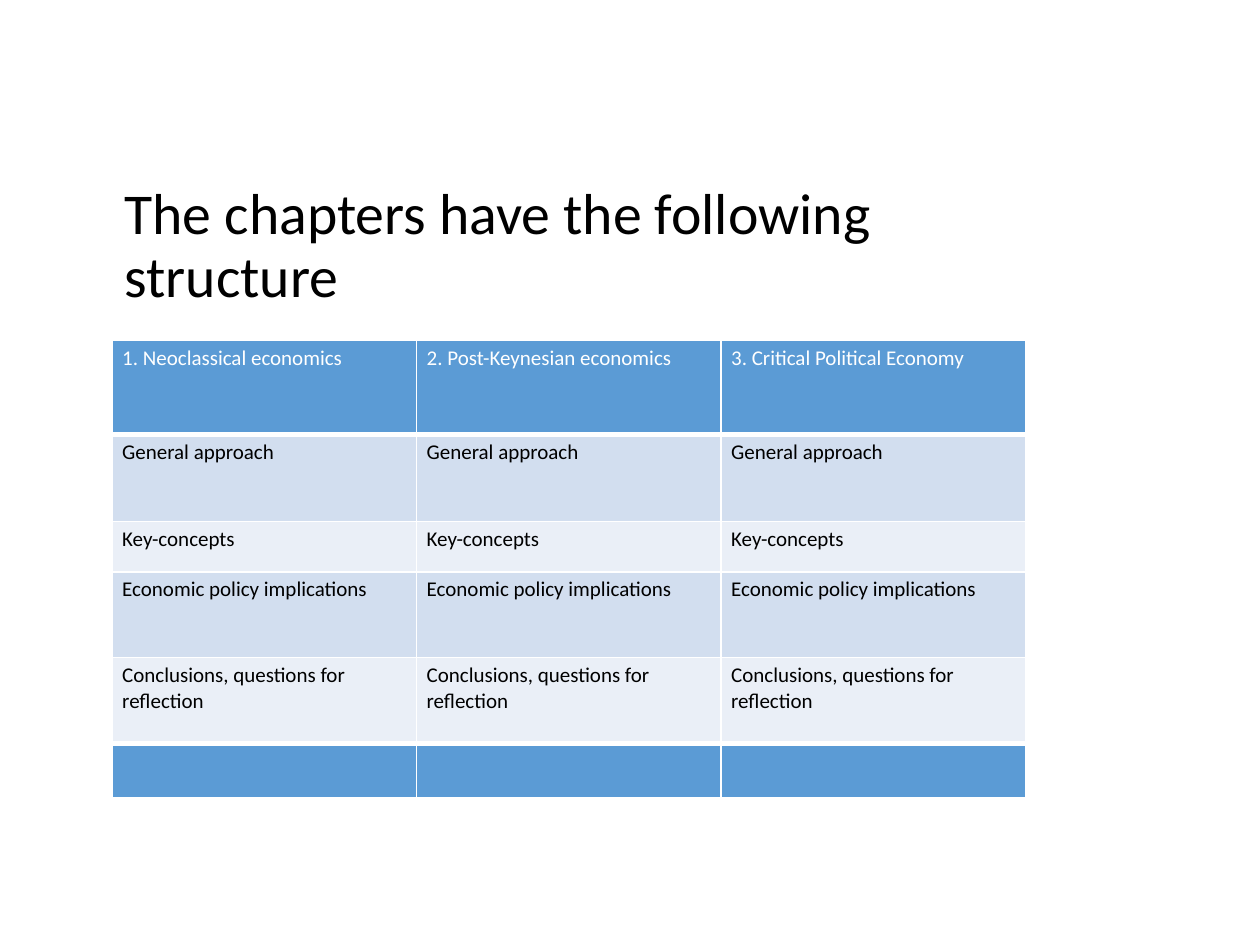
from dataclasses import dataclass

from lxml.etree import SubElement
from pptx import Presentation
from pptx.dml.color import RGBColor
from pptx.enum.text import MSO_ANCHOR
from pptx.oxml.ns import qn
from pptx.slide import Slide
from pptx.table import _Cell as Cell
from pptx.text.text import _Paragraph as Paragraph
from pptx.util import Inches, Pt

WHITE = RGBColor(0xFF, 0xFF, 0xFF)
BLACK = RGBColor(0x00, 0x00, 0x00)
BLUE = RGBColor(0x5B, 0x9B, 0xD5)
DARK_BAND = RGBColor(0xD2, 0xDE, 0xEF)
LIGHT_BAND = RGBColor(0xEA, 0xEF, 0xF7)

FONT = "Calibri"
SLIDE_WIDTH, SLIDE_HEIGHT = Inches(10), Inches(7.5)
LEFT = Inches(0.89)
THIN, THICK = 1, 3


@dataclass(frozen=True)
class TableRow:
    """Describe one row of the chapter table."""

    height: float
    texts: tuple[str, ...]
    fill: RGBColor
    color: RGBColor = BLACK
    top: int = THIN
    bottom: int = THIN


SCHOOLS = ("1. Neoclassical economics", "2. Post-Keynesian economics", "3. Critical Political Economy")
COLUMNS = len(SCHOOLS)
ROWS = (
    TableRow(0.75, SCHOOLS, BLUE, WHITE, bottom=THICK),
    TableRow(0.69, ("General approach",) * COLUMNS, DARK_BAND),
    TableRow(0.4, ("Key-concepts",) * COLUMNS, LIGHT_BAND),
    TableRow(0.68, ("Economic policy implications",) * COLUMNS, DARK_BAND),
    TableRow(0.68, ("Conclusions, questions for reflection",) * COLUMNS, LIGHT_BAND),
    TableRow(0.43, ("",) * COLUMNS, BLUE, WHITE, top=THICK),
)


def add_run(paragraph: Paragraph, text: str, size: float, color: RGBColor) -> None:
    """Add one run of regular text to a paragraph."""
    run = paragraph.add_run()
    run.text = text
    run.font.name = FONT
    run.font.size = Pt(size)
    run.font.bold = False
    run.font.color.rgb = color


def add_title(slide: Slide, text: str) -> None:
    """Place the title above the table."""
    shape = slide.shapes.add_textbox(LEFT, Inches(1.42), Inches(6.35), Inches(1.44))
    frame = shape.text_frame
    frame.word_wrap = True
    frame.vertical_anchor = MSO_ANCHOR.TOP
    paragraph = frame.paragraphs[0]
    paragraph.line_spacing = 0.9
    add_run(paragraph, text, 33, BLACK)


def set_borders(cell: Cell, top: int, bottom: int) -> None:
    """Give a cell white borders on its four sides."""
    properties = cell._tc.get_or_add_tcPr()
    for side, width in (("L", THIN), ("R", THIN), ("T", top), ("B", bottom)):
        line = SubElement(properties, qn(f"a:ln{side}"), w=str(Pt(width)))
        SubElement(SubElement(line, qn("a:solidFill")), qn("a:srgbClr"), val=str(WHITE))


def fill_cell(cell: Cell, text: str, row: TableRow) -> None:
    """Format one cell and write its text."""
    set_borders(cell, row.top, row.bottom)
    cell.fill.solid()
    cell.fill.fore_color.rgb = row.fill
    cell.margin_left = cell.margin_right = Inches(0.08)
    cell.margin_top = cell.margin_bottom = Inches(0.04)
    if text:
        add_run(cell.text_frame.paragraphs[0], text, 12, row.color)


def add_chapter_table(slide: Slide, rows: tuple[TableRow, ...]) -> None:
    """Draw the table of chapters from its row descriptions."""
    height = Inches(sum(row.height for row in rows))
    width = Inches(7.25)
    table = slide.shapes.add_table(len(rows), COLUMNS, LEFT, Inches(2.7), width, height).table
    table.horz_banding = False
    for index, row in enumerate(rows):
        table.rows[index].height = Inches(row.height)
        for column, text in enumerate(row.texts):
            fill_cell(table.cell(index, column), text, row)


def main() -> None:
    """Build and save the slide."""
    presentation = Presentation()
    presentation.slide_width, presentation.slide_height = SLIDE_WIDTH, SLIDE_HEIGHT
    slide = presentation.slides.add_slide(presentation.slide_layouts[6])
    add_title(slide, "The chapters have the following structure")
    add_chapter_table(slide, ROWS)
    presentation.save("out.pptx")


if __name__ == "__main__":
    main()
